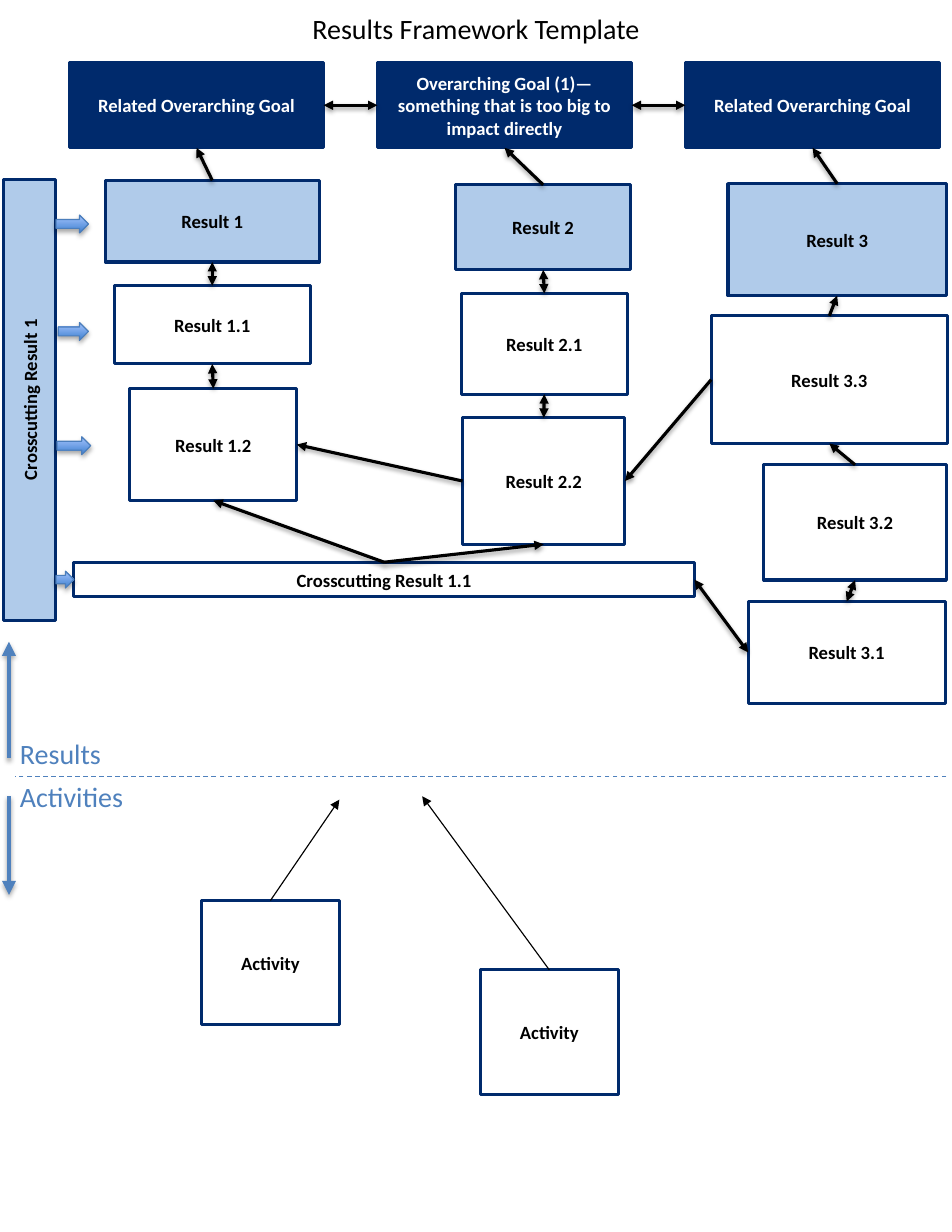
from dataclasses import dataclass

from lxml import etree
from pptx import Presentation
from pptx.dml.color import RGBColor
from pptx.enum import dml, shapes, text
from pptx.oxml.ns import qn
from pptx.util import Inches, Pt


@dataclass(frozen=True)
class Theme:
    font: str = "Calibri"
    navy: str = "002A6C"
    pale: str = "B0CBEA"
    blue: str = "4F81BD"
    edge: str = "4B7EBC"
    deep: str = "3F80CE"
    light: str = "A4C4FF"
    black: str = "000000"
    white: str = "FFFFFF"
    head: float = 18
    body: float = 12
    thin: float = 0.75
    mid: float = 2
    thick: float = 3


@dataclass(frozen=True)
class Box:
    key: str
    words: str
    left: float
    top: float
    width: float
    height: float
    fill: str | None = None
    ink: str = Theme.black


@dataclass(frozen=True)
class Link:
    start: str
    out: int
    end: str
    into: int
    both: bool = False


T = Theme()
TOP, LEFT, BOTTOM, RIGHT = range(4)  # connection sites of a rectangle


def rgb(code: str) -> RGBColor:
    return RGBColor.from_string(code)


def put(frame, words: str, *, size=T.body, color=T.black, bold=False,
        align=text.PP_ALIGN.CENTER, anchor=text.MSO_ANCHOR.MIDDLE, grow=False) -> None:
    frame.word_wrap = True
    frame.vertical_anchor = anchor
    fit = text.MSO_AUTO_SIZE
    frame.auto_size = fit.SHAPE_TO_FIT_TEXT if grow else fit.NONE
    para = frame.paragraphs[0]
    para.alignment = align
    run = para.add_run()
    run.text = words
    run.font.name, run.font.size, run.font.bold = T.font, Pt(size), bold
    run.font.color.rgb = rgb(color)


def shade(effects, alpha: int, dist: float) -> None:
    """Put a soft shadow, falling straight down, in an effect list."""
    cast = etree.SubElement(effects, qn("a:outerShdw"), blurRad=str(Pt(3.1)),
                            dist=str(Pt(dist)), dir="5400000", rotWithShape="0")
    tint = etree.SubElement(cast, qn("a:srgbClr"), val=T.black)
    etree.SubElement(tint, qn("a:alpha"), val=str(alpha * 1000))


def draw_box(slide, box: Box):
    shape = slide.shapes.add_shape(
        shapes.MSO_SHAPE.RECTANGLE,
        *map(Inches, (box.left, box.top, box.width, box.height)))
    shape.shadow.inherit = False
    if box.fill:
        shape.fill.solid()
        shape.fill.fore_color.rgb = rgb(box.fill)
    else:
        shape.fill.background()
    shape.line.color.rgb = rgb(T.navy)
    shape.line.width = Pt(T.mid)
    put(shape.text_frame, box.words, color=box.ink, bold=True)
    return shape


def draw_line(slide, start=(0, 0), end=(0, 0), *, color=T.black, width=T.thin,
              ends=("tailEnd",), dash=False, shadow=None):
    line = slide.shapes.add_connector(
        shapes.MSO_CONNECTOR.STRAIGHT, *map(Inches, (*start, *end)))
    line.line.color.rgb = rgb(color)
    line.line.width = Pt(width)
    if dash:
        line.line.dash_style = dml.MSO_LINE.DASH
    props = line._element.spPr
    for tip in ends:
        etree.SubElement(props.find(qn("a:ln")), qn(f"a:{tip}"), type="triangle")
    effects = etree.SubElement(props, qn("a:effectLst"))
    if shadow:
        shade(effects, *shadow)
    return line


def draw_link(slide, link: Link, made: dict) -> None:
    ends = ("headEnd", "tailEnd") if link.both else ("tailEnd",)
    line = draw_line(slide, width=T.mid, ends=ends, shadow=(38, 1.6))
    line.begin_connect(made[link.start], link.out)
    line.end_connect(made[link.end], link.into)


def draw_arrow(slide, left: float, top: float, width: float, height: float) -> None:
    arrow = slide.shapes.add_shape(
        shapes.MSO_SHAPE.RIGHT_ARROW, *map(Inches, (left, top, width, height)))
    arrow.fill.gradient()
    arrow.fill.gradient_angle = 90
    for stop, color in zip(arrow.fill.gradient_stops, (T.deep, T.light)):
        stop.color.rgb = rgb(color)
    arrow.line.color.rgb = rgb(T.edge)
    arrow.line.width = Pt(T.thin)
    arrow.shadow.inherit = False
    shade(arrow._element.spPr.find(qn("a:effectLst")), 35, 1.8)


GOAL = (0.56, 2.27, 0.76, T.navy, T.white)  # top, width, height, fill, ink


def goal(key: str, words: str, left: float) -> Box:
    top, width, height, fill, ink = GOAL
    return Box(key, words, left, top, width, height, fill, ink)


BOXES = [
    goal("G1", "Related Overarching Goal", 0.62),
    goal("G2", "Overarching Goal (1)—something that is too big to impact directly", 3.37),
    goal("G3", "Related Overarching Goal", 6.12),
    Box("1", "Result 1", 0.94, 1.61, 1.91, 0.73, T.pale),
    Box("1.1", "Result 1.1", 1.02, 2.55, 1.75, 0.7),
    Box("1.2", "Result 1.2", 1.16, 3.47, 1.49, 1),
    Box("2", "Result 2", 4.07, 1.65, 1.56, 0.76, T.pale),
    Box("2.1", "Result 2.1", 4.12, 2.62, 1.48, 0.9),
    Box("2.2", "Result 2.2", 4.13, 3.73, 1.45, 1.13),
    Box("C1.1", "Crosscutting Result 1.1", 0.66, 5.02, 5.54, 0.31),
    Box("3", "Result 3", 6.5, 1.64, 1.95, 1, T.pale),
    Box("3.1", "Result 3.1", 6.68, 5.37, 1.76, 0.91),
    Box("3.2", "Result 3.2", 6.82, 4.15, 1.63, 1.03),
    Box("3.3", "Result 3.3", 6.35, 2.82, 2.11, 1.14),
    Box("A1", "Activity", 1.8, 8.04, 1.23, 1.11),
    Box("A2", "Activity", 4.29, 8.66, 1.23, 1.11),
    Box("C1", "Crosscutting Result 1", 0.03, 1.6, 0.47, 3.94, T.pale),
]

LINKS = [
    Link("C1.1", RIGHT, "3.1", LEFT, True),
    Link("3.1", TOP, "3.2", BOTTOM, True),
    Link("3.2", TOP, "3.3", BOTTOM),
    Link("3.3", TOP, "3", BOTTOM),
    Link("C1.1", TOP, "2.2", BOTTOM),
    Link("C1.1", TOP, "1.2", BOTTOM),
    Link("1.1", BOTTOM, "1.2", TOP, True),
    Link("1.1", TOP, "1", BOTTOM, True),
    Link("2.2", TOP, "2.1", BOTTOM, True),
    Link("2.1", TOP, "2", BOTTOM, True),
    *(Link(str(n), TOP, f"G{n}", BOTTOM) for n in (1, 2, 3)),
    Link("G1", RIGHT, "G2", LEFT, True),
    Link("G2", RIGHT, "G3", LEFT, True),
    Link("3.3", LEFT, "2.2", RIGHT),
    Link("2.2", LEFT, "1.2", RIGHT),
]

ARROWS = [(0.5, 1.92, 0.29, 0.16), (0.52, 2.88, 0.27, 0.16),
          (0.51, 3.9, 0.3, 0.16), (0.5, 5.1, 0.16, 0.15)]


def main() -> None:
    deck = Presentation()
    deck.slide_width, deck.slide_height = Inches(8.5), Inches(11)
    slide = deck.slides.add_slide(deck.slide_layouts[5])

    # Title
    title = slide.shapes.title
    title.left, title.top, title.width, title.height = map(Inches, (2.25, 0.05, 4, 0.4))
    put(title.text_frame, "Results Framework Template", size=T.head,
        anchor=text.MSO_ANCHOR.TOP, grow=True)

    # Boxes, with the side bar's text turned upwards
    made = {box.key: draw_box(slide, box) for box in BOXES}
    made["C1"].text_frame._txBody.bodyPr.set("vert", "vert270")

    # Divider with its two labels and direction arrows
    draw_line(slide, (8.45, 6.93), (0.13, 6.93), color=T.blue, ends=(), dash=True)
    for words, top, width, start, end in (("Results", 6.53, 1.01, 6.77, 5.73),
                                          ("Activities", 6.91, 1.18, 7.11, 7.99)):
        label = slide.shapes.add_textbox(*map(Inches, (0.08, top, width, 0.4)))
        put(label.text_frame, words, size=T.head, color=T.blue, grow=True,
            align=text.PP_ALIGN.LEFT, anchor=text.MSO_ANCHOR.TOP)
        draw_line(slide, (0.08, start), (0.08, end), color=T.blue,
                  width=T.thick, shadow=(35, 1.8))

    # Lines between boxes, and from the activities upwards
    for link in LINKS:
        draw_link(slide, link, made)
    for key, end in (("A1", (3.03, 7.14)), ("A2", (3.77, 7.11))):
        draw_line(slide, end=end).begin_connect(made[key], TOP)

    # Block arrows out of the side bar
    for spot in ARROWS:
        draw_arrow(slide, *spot)

    deck.save("out.pptx")


if __name__ == "__main__":
    main()
